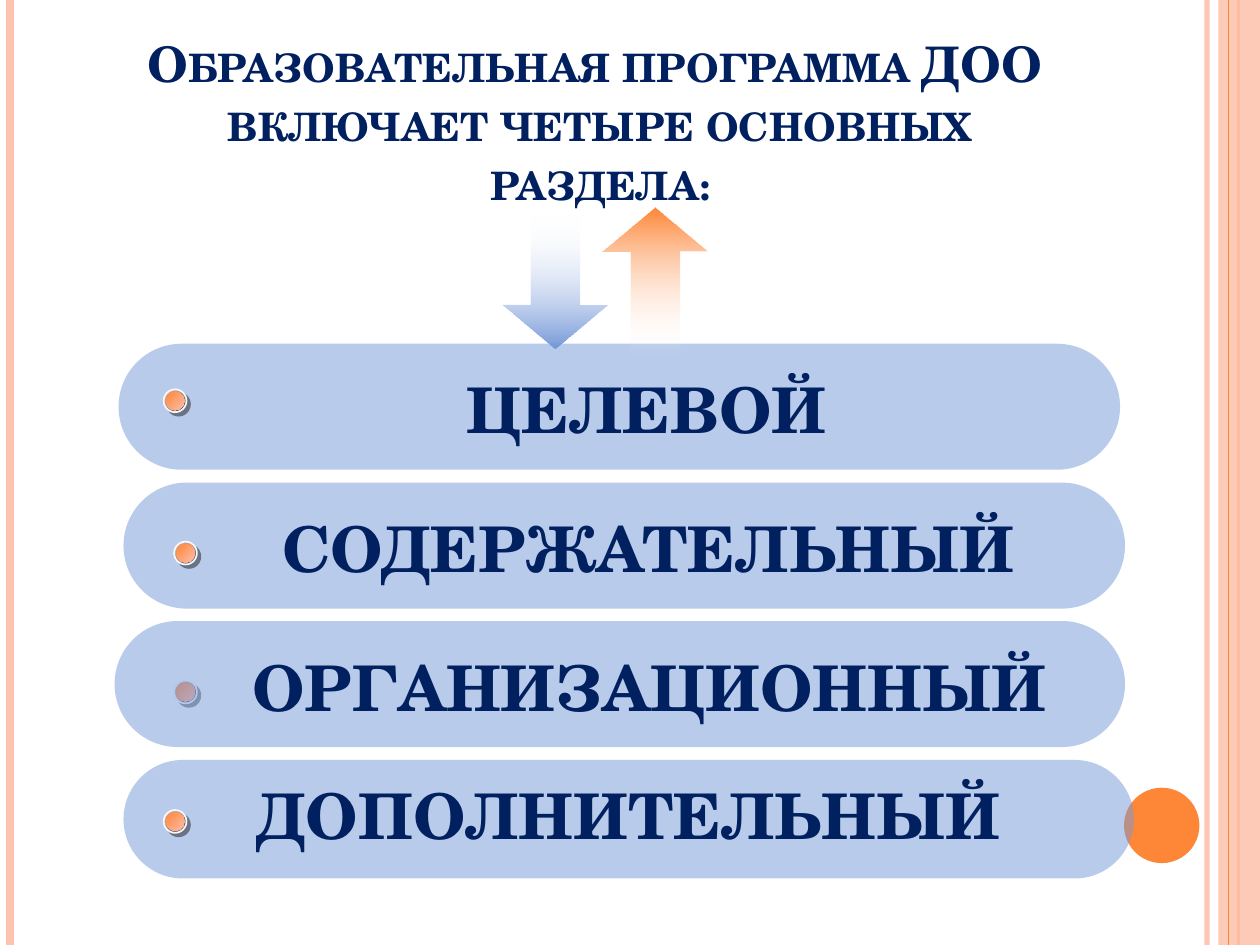
from lxml import etree
from pptx import Presentation
from pptx import util as u
from pptx.dml.color import RGBColor
from pptx.enum import shapes, text
from pptx.oxml import ns

NAVY = RGBColor(0x00, 0x20, 0x60)
BLUE = RGBColor(0x75, 0x98, 0xD9)
ORANGE = RGBColor(0xFE, 0x86, 0x37)
PEACH = RGBColor(0xFE, 0xC3, 0xAE)
BLUSH = RGBColor(0xFE, 0xBE, 0xA8)
WHITE = RGBColor(0xFF, 0xFF, 0xFF)
PEARL = RGBColor(0xF8, 0xF8, 0xF8)
SILVER = RGBColor(0xDD, 0xDD, 0xE1)
DEEP = RGBColor(0x22, 0x38, 0x64)
FONT = "TeX Gyre Schola"
KIND = shapes.MSO_SHAPE


def add_node(root, tag, **attrs):
    return etree.SubElement(root, ns.qn(tag), **attrs)


def fade(item, part):
    color = next(item._element.spPr.iter(ns.qn("a:srgbClr")))
    add_node(color, "a:alpha", val=str(part * 1000))


def add_form(pool, kind, box, color=None):
    form = pool.add_shape(kind, *[u.Cm(n) for n in box])
    form.shadow.inherit = False
    form.line.fill.background()
    if color is not None:
        form.fill.solid()
        form.fill.fore_color.rgb = color
    return form


def blend(form, start, end, angle):
    form.fill.gradient()
    form.fill.gradient_angle = angle
    for stop, color in zip(form.fill.gradient_stops, (start, end)):
        stop.color.rgb = color


def add_rule(pool, x, color, width):
    rule = pool.add_connector(shapes.MSO_CONNECTOR.STRAIGHT,
                              u.Cm(x), 0, u.Cm(x), u.Cm(19.05))
    rule.line.color.rgb = color
    rule.line.width = u.Pt(width)
    add_node(rule._element.spPr, "a:effectLst")
    return rule


def add_run(para, words, size):
    run = para.add_run()
    run.text = words
    run.font.name = FONT
    run.font.size = u.Pt(size)
    run.font.bold = True
    run.font.color.rgb = NAVY
    return run


def set_label(frame, words, wrap):
    frame.word_wrap = wrap
    para = frame.paragraphs[0]
    para.alignment = text.PP_ALIGN.CENTER
    para.line_spacing = 0.9
    add_run(para, words, 36)


def add_label(pool, words, box):
    label = pool.add_textbox(*[u.Cm(n) for n in box])
    label.text_frame.auto_size = text.MSO_AUTO_SIZE.SHAPE_TO_FIT_TEXT
    set_label(label.text_frame, words, True)


def add_pill(pool, box):
    pill = add_form(pool, KIND.ROUNDED_RECTANGLE, box, BLUE)
    pill.adjustments[0] = 0.5
    fade(pill, 50)
    return pill


def add_arrow(pool, box, color, turn):
    arrow = add_form(pool, KIND.RIGHT_ARROW, box)
    arrow.adjustments[0] = 0.465
    arrow.adjustments[1] = 0.421
    arrow.rotation = turn
    blend(arrow, WHITE, color, 0)
    fade(arrow, 0)


def add_bead(pool, x, y):
    group = pool.add_group_shape().shapes
    rim = add_form(group, KIND.OVAL, (x, y, 0.46, 0.46))
    blend(rim, SILVER, DEEP, 315)
    rim.line.color.rgb = PEARL
    rim.line.width = u.Pt(1)
    effect = rim._element.spPr.find(ns.qn("a:effectLst"))
    shade = add_node(effect, "a:outerShdw", dist=str(u.Pt(2.8)),
                     dir="2700000", algn="ctr", rotWithShape="0")
    tint = add_node(shade, "a:srgbClr", val="1C1C1C")
    add_node(tint, "a:alpha", val="50000")
    core = add_form(group, KIND.OVAL, (x + 0.04, y + 0.04, 0.38, 0.38))
    blend(core, ORANGE, BLUSH, 315)


def set_title(title):
    title.left, title.top = u.Cm(2.18), u.Cm(1.19)
    title.width, title.height = u.Cm(19.84), u.Cm(3.18)
    frame = title.text_frame
    frame.auto_size = text.MSO_AUTO_SIZE.NONE
    frame.word_wrap = True
    frame.vertical_anchor = text.MSO_ANCHOR.BOTTOM
    para = frame.paragraphs[0]
    para.alignment = text.PP_ALIGN.CENTER
    first = add_run(para, "Образовательная программа ДОО ", 28)
    para.add_line_break()
    last = add_run(para, "включает четыре основных раздела:", 28)
    for run in (first, last):
        run.font._element.set("cap", "small")


def add_frame(pool):
    fade(add_rule(pool, 24.33, PEACH, 3), 93)
    add_rule(pool, 0.2, PEACH, 4.5)
    add_rule(pool, 24.97, ORANGE, 1.5)
    fade(add_form(pool, KIND.RECTANGLE, (24.56, 0, 0.84, 19.05), PEACH), 87)
    add_rule(pool, 24.77, ORANGE, 0.75)
    add_form(pool, KIND.OVAL, (22.66, 15.88, 1.52, 1.52), ORANGE)


def main():
    deck = Presentation()
    deck.slide_width, deck.slide_height = u.Cm(25.4), u.Cm(19.05)
    slide = deck.slides.add_slide(deck.slide_layouts[5])
    pool = slide.shapes
    add_frame(pool)
    set_title(pool.title)
    add_arrow(pool, (9.83, 4.62, 2.72, 2.11), BLUE, 90)
    add_bead(pool, 3.51, 13.72)
    for x, y, width in ((2.39, 6.93, 20.19), (2.49, 9.73, 20.19),
                        (2.31, 12.52, 20.37)):
        add_pill(pool, (x, y, width, 2.54))
    add_arrow(pool, (11.71, 4.62, 3, 2.11), ORANGE, 270)
    for words, x, y, width in (("ЦЕЛЕВОЙ", 4.17, 7.52, 17.73),
                               ("СОДЕРЖАТЕЛЬНЫЙ", 4.37, 10.31, 17.42),
                               ("ОРГАНИЗАЦИОННЫЙ", 4.6, 13.13, 16.99)):
        add_label(pool, words, (x, y, width, 1.65))
    pill = add_pill(pool, (2.49, 15.32, 20.37, 2.39))
    pill.text_frame.vertical_anchor = text.MSO_ANCHOR.MIDDLE
    set_label(pill.text_frame, "ДОПОЛНИТЕЛЬНЫЙ", False)
    for x, y in ((3.51, 10.92), (3.3, 7.85), (3.3, 16.33)):
        add_bead(pool, x, y)
    deck.save("out.pptx")


if __name__ == "__main__":
    main()
